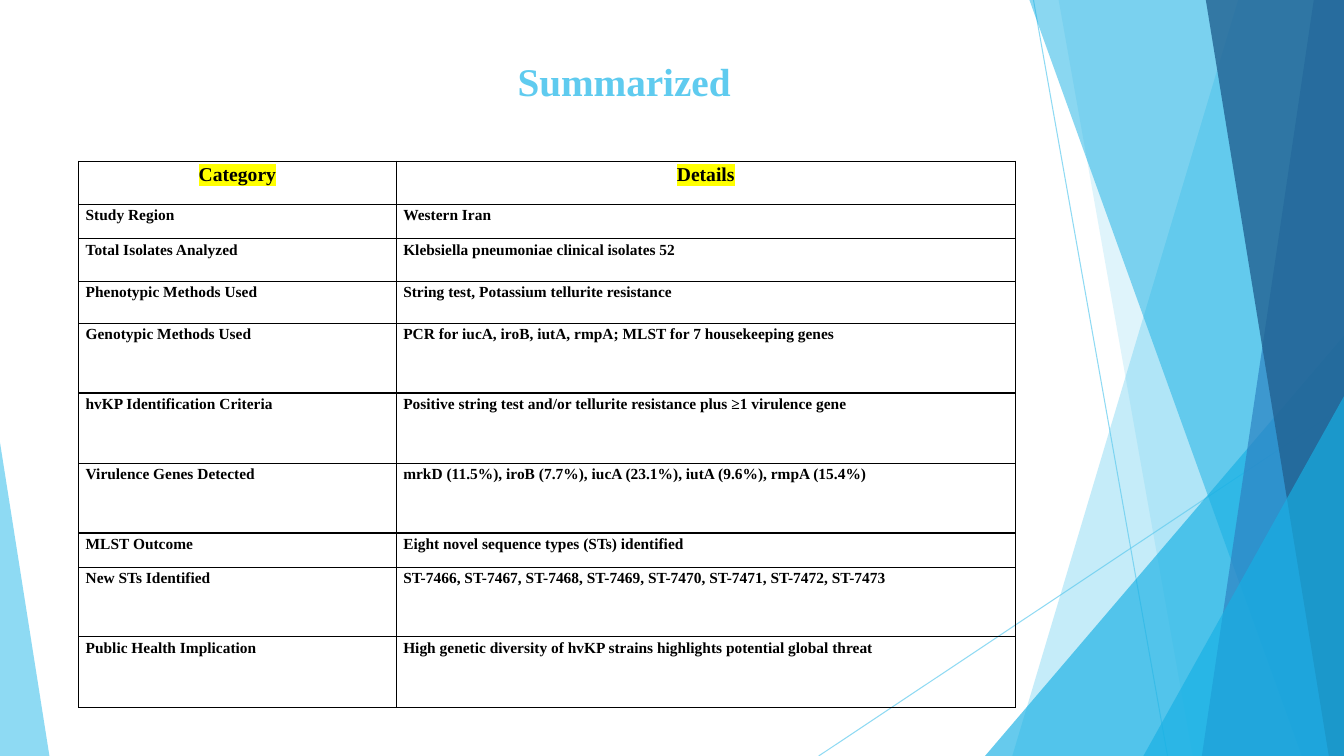
"""Build the Summarized slide: a study table beside a fan of blue bands."""
from lxml import etree
from pptx import Presentation
from pptx.dml.color import RGBColor
from pptx.enum import shapes, text
from pptx.oxml import ns
from pptx.util import Inches, Pt

WIDTH, HEIGHT = 13.33, 7.5
FONT = "Times New Roman"
SKY, BLACK, YELLOW = "5FCBEF", "000000", "FFFF00"
TITLE = "Summarized"
HEADER = ("Category", "Details")
ROWS = [
    ("Study Region", "Western Iran", 0.34),
    ("Total Isolates Analyzed", "Klebsiella pneumoniae clinical isolates 52", 0.42),
    ("Phenotypic Methods Used", "String test, Potassium tellurite resistance", 0.42),
    ("Genotypic Methods Used",
     "PCR for iucA, iroB, iutA, rmpA; MLST for 7 housekeeping genes", 0.69),
    ("hvKP Identification Criteria",
     "Positive string test and/or tellurite resistance plus ≥1 virulence gene", 0.7),
    ("Virulence Genes Detected",
     "mrkD (11.5%), iroB (7.7%), iucA (23.1%), iutA (9.6%), rmpA (15.4%)", 0.69),
    ("MLST Outcome", "Eight novel sequence types (STs) identified", 0.34),
    ("New STs Identified",
     "ST-7466, ST-7467, ST-7468, ST-7469, ST-7470, ST-7471, ST-7472, ST-7473", 0.69),
    ("Public Health Implication",
     "High genetic diversity of hvKP strains highlights potential global threat", 0.7),
]
HEADER_HEIGHT = 0.43
COLUMNS = (3.15, 6.14)
TABLE_LEFT, TABLE_TOP = 0.78, 1.6

RAYS = [(10.25, 0, 11.58, HEIGHT), (WIDTH, 4.03, 8.12, HEIGHT)]
# Each band: top x, bottom x, colour, opacity; each wedge: left, top, width, apex, colour, opacity.
DECOR = [
    ("band", (12.28, 10.04), SKY, 36),
    ("band", (10.5, 11.83), SKY, 20),
    ("wedge", (9.77, 3.33, 3.56, 1), "17B0E4", 66),
    ("band", (10.21, 12.91), "17B0E4", 50),
    ("band", (13.03, 11.92), "2E83C3", 70),
    ("band", (11.96, 13.18), "226292", 80),
    ("wedge", (11.34, 3.93, 1.99, 1), "17B0E4", 66),
    ("wedge", (0, 4.39, 0.49, 0), SKY, 70),
]


def rgb(value):
    return RGBColor.from_string(value)


def sub(parent, tag, **attrs):
    return etree.SubElement(parent, ns.qn(tag), attrs)


def set_alpha(fill_parent, percent):
    color = next(fill_parent.iter(ns.qn("a:srgbClr")))
    sub(color, "a:alpha", val=str(percent * 1000))


def add_ray(s, ends):
    ray = s.shapes.add_connector(shapes.MSO_CONNECTOR.STRAIGHT, *map(Inches, ends))
    ray.line.color.rgb = rgb(SKY)
    ray.line.width = Pt(0.75)
    set_alpha(ray.line._get_or_add_ln(), 70)
    sub(ray._element.spPr, "a:effectLst")


def add_decor(s, kind, geometry, color, opacity):
    if kind == "band":
        top_x, bottom_x = geometry
        corners = [(WIDTH, 0), (WIDTH, HEIGHT), (bottom_x, HEIGHT)]
        builder = s.shapes.build_freeform(Inches(top_x), 0)
        builder.add_line_segments([(Inches(x), Inches(y)) for x, y in corners])
        sp = builder.convert_to_shape()
    else:
        left, top, width, apex = geometry
        sp = s.shapes.add_shape(shapes.MSO_SHAPE.ISOSCELES_TRIANGLE, Inches(left),
                                Inches(top), Inches(width), Inches(HEIGHT - top))
        sp.adjustments[0] = apex
    sp.shadow.inherit = False
    sp.fill.solid()
    sp.fill.fore_color.rgb = rgb(color)
    set_alpha(sp._element.spPr, opacity)
    sp.line.fill.background()


def add_run(p, content, size, color, highlight=None):
    r = p.add_run()
    r.text = content
    r.font.size = Pt(size)
    r.font.bold = True
    r.font.color.rgb = rgb(color)
    if highlight:
        sub(sub(r.font._element, "a:highlight"), "a:srgbClr", val=highlight)
    r.font.name = FONT


def add_title(s):
    title = s.shapes.title
    title.left, title.top, title.width, title.height = map(Inches, (0.2, 0, 11.98, 1.22))
    tf = title.text_frame
    tf.vertical_anchor = text.MSO_ANCHOR.TOP
    tf.margin_top = Inches(0.1)
    p = tf.paragraphs[0]
    p.alignment = text.PP_ALIGN.CENTER
    p.line_spacing = 2.0
    add_run(p, TITLE, 28, SKY)


def fill_cell(cell, content, is_header):
    cell.margin_left = cell.margin_right = Inches(0.07)
    cell.margin_top = cell.margin_bottom = 0
    tc_pr = cell._tc.get_or_add_tcPr()
    for side in "LRTB":
        border = sub(tc_pr, f"a:ln{side}", w=str(Pt(1)))
        sub(sub(border, "a:solidFill"), "a:srgbClr", val=BLACK)
    cell.fill.background()
    p = cell.text_frame.paragraphs[0]
    p.alignment = text.PP_ALIGN.CENTER if is_header else text.PP_ALIGN.LEFT
    p.line_spacing = 1.15
    p.space_after = Pt(8)
    add_run(p, content, 14 if is_header else 11, BLACK, YELLOW if is_header else None)


def add_summary(s):
    rows = [(*HEADER, HEADER_HEIGHT), *ROWS]
    heights = [row[-1] for row in rows]
    frame = s.shapes.add_table(len(rows), len(COLUMNS), Inches(TABLE_LEFT), Inches(TABLE_TOP),
                               Inches(sum(COLUMNS)), Inches(sum(heights)))
    table = frame.table
    table.horz_banding = False
    for column, width in zip(table.columns, COLUMNS):
        column.width = Inches(width)
    for i, (*contents, height) in enumerate(rows):
        table.rows[i].height = Inches(height)
        for j, content in enumerate(contents):
            fill_cell(table.cell(i, j), content, i == 0)


def main():
    prs = Presentation()
    prs.slide_width, prs.slide_height = Inches(WIDTH), Inches(HEIGHT)
    s = prs.slides.add_slide(prs.slide_layouts[5])
    for ends in RAYS:
        add_ray(s, ends)
    for item in DECOR:
        add_decor(s, *item)
    add_title(s)
    add_summary(s)
    prs.save("out.pptx")


if __name__ == "__main__":
    main()
